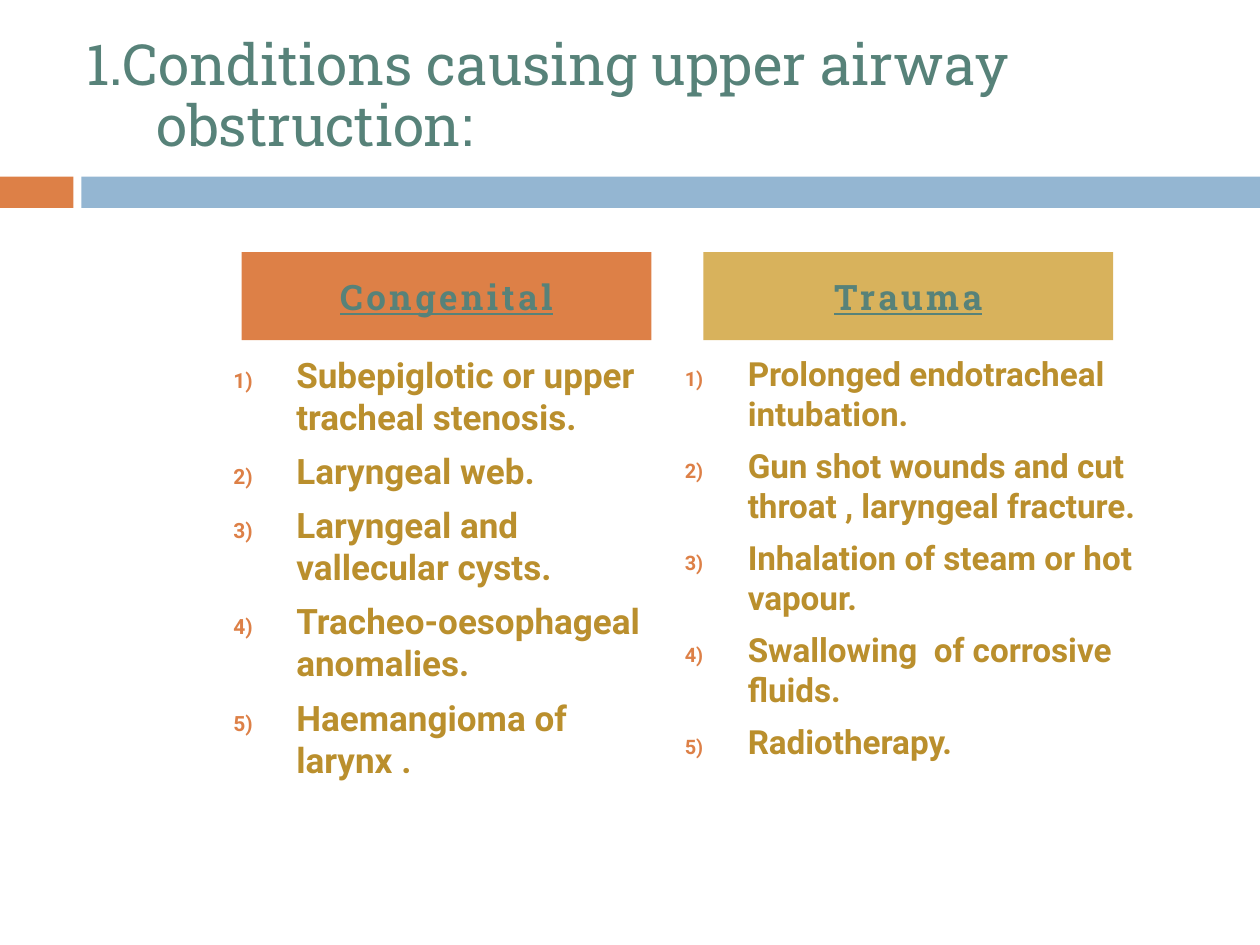
import pptx
import pptx.dml.color
import pptx.enum.shapes
import pptx.enum.text
import pptx.util
from dataclasses import dataclass
from lxml import etree
from pptx.oxml.ns import qn

Cm = pptx.util.Cm
Pt = pptx.util.Pt
ALIGN = pptx.enum.text.PP_ALIGN
ANCHOR = pptx.enum.text.MSO_ANCHOR


@dataclass(frozen=True)
class Theme:
    orange: str = "DD8047"
    blue: str = "94B6D2"
    gold: str = "D8B25C"
    teal: str = "578279"
    ochre: str = "BA8F2D"
    slab: str = "Roboto Slab"
    sans: str = "Roboto"
    title: float = 32.4
    head: float = 20
    gap: float = 7


class Deck:
    """Holds the theme and the current slide."""

    def __init__(self, theme):
        self.theme = theme
        self.file = pptx.Presentation()
        self.file.slide_width = Cm(25.4)
        self.file.slide_height = Cm(19.05)
        # Comparison layout: title, then a head and a list per column
        self.slide = self.file.slides.add_slide(self.file.slide_layouts[4])

    def paint(self, shape, color):
        shape.fill.solid()
        shape.fill.fore_color.rgb = pptx.dml.color.RGBColor.from_string(color)

    def place(self, shape, box):
        shape.left, shape.top, shape.width, shape.height = map(Cm, box)

    def fill(self, idx, box, text, anchor):
        """Move a placeholder, set its text and return its frame."""
        holder = self.slide.placeholders[idx]
        self.place(holder, box)
        frame = holder.text_frame
        frame.text = text
        frame.word_wrap = True
        frame.auto_size = pptx.enum.text.MSO_AUTO_SIZE.NONE
        frame.vertical_anchor = anchor
        return frame

    def style(self, para, face, size, color, bold=False):
        for run in para.runs:
            font = run.font
            font.name, font.size, font.bold = face, Pt(size), bold
            font.color.rgb = pptx.dml.color.RGBColor.from_string(color)

    def hang(self, para, depth):
        props = para._p.get_or_add_pPr()
        props.set("marL", str(Cm(depth)))
        props.set("indent", str(-Cm(depth)))
        return props

    def bar(self, box, color):
        kind = pptx.enum.shapes.MSO_SHAPE.RECTANGLE
        shape = self.slide.shapes.add_shape(kind, *map(Cm, box))
        shape.shadow.inherit = False
        shape.line.fill.background()
        self.paint(shape, color)

    def title(self, box, text):
        look = self.theme
        para = self.fill(0, box, text, ANCHOR.MIDDLE).paragraphs[0]
        para.alignment = ALIGN.LEFT
        para.line_spacing = 0.9
        self.hang(para, 1.42)
        self.style(para, look.slab, look.title, look.teal)

    def head(self, idx, box, text, color):
        look = self.theme
        para = self.fill(idx, box, text, ANCHOR.MIDDLE).paragraphs[0]
        self.paint(self.slide.placeholders[idx], color)
        para.alignment = ALIGN.CENTER
        para.space_before = Pt(look.gap)
        self.style(para, look.slab, look.head, look.teal, True)
        for run in para.runs:
            run.font.underline = True
            run.font._element.set("spc", "200")

    def list(self, idx, box, items, size):
        look = self.theme
        frame = self.fill(idx, box, "\n".join(items), ANCHOR.TOP)
        for para in frame.paragraphs:
            para.space_before = Pt(look.gap)
            self.style(para, look.sans, size, look.ochre, True)
            # Small orange numbers
            props = self.hang(para, 1.27)
            tint = etree.SubElement(props, qn("a:buClr"))
            etree.SubElement(tint, qn("a:srgbClr"), val=look.orange)
            etree.SubElement(props, qn("a:buSzPct"), val="60000")
            etree.SubElement(props, qn("a:buFont"), typeface=look.sans)
            etree.SubElement(props, qn("a:buAutoNum"), type="arabicParenR")


def main():
    theme = Theme()
    deck = Deck(theme)

    # Title and the band below it
    deck.title((1.48, 0.76, 22.65, 2.41),
               "1.Conditions causing upper airway obstruction:")
    deck.bar((0, 3.56, 1.48, 0.63), theme.orange)
    deck.bar((1.64, 3.56, 23.76, 0.63), theme.blue)

    # Columns: head, its colour and left edge; list left, width and type size
    columns = [
        ("Congenital", theme.orange, 4.87, 4.45, 9.31, 20, [
            "Subepiglotic or upper tracheal stenosis.",
            "Laryngeal web.",
            "Laryngeal and vallecular cysts.",
            "Tracheo-oesophageal anomalies.",
            "Haemangioma of larynx .",
        ]),
        ("Trauma", theme.gold, 14.18, 13.55, 9.74, 19, [
            "Prolonged endotracheal intubation.",
            "Gun shot wounds and cut throat , laryngeal fracture.",
            "Inhalation of steam or hot vapour.",
            "Swallowing  of corrosive fluids.",
            "Radiotherapy.",
        ]),
    ]
    for n, (name, color, edge, left, width, size, items) in enumerate(columns):
        deck.head(2 * n + 1, (edge, 5.08, 8.26, 1.78), name, color)
        deck.list(2 * n + 2, (left, 6.99, width, 9.78), items, size)

    deck.file.save("out.pptx")


if __name__ == "__main__":
    main()
